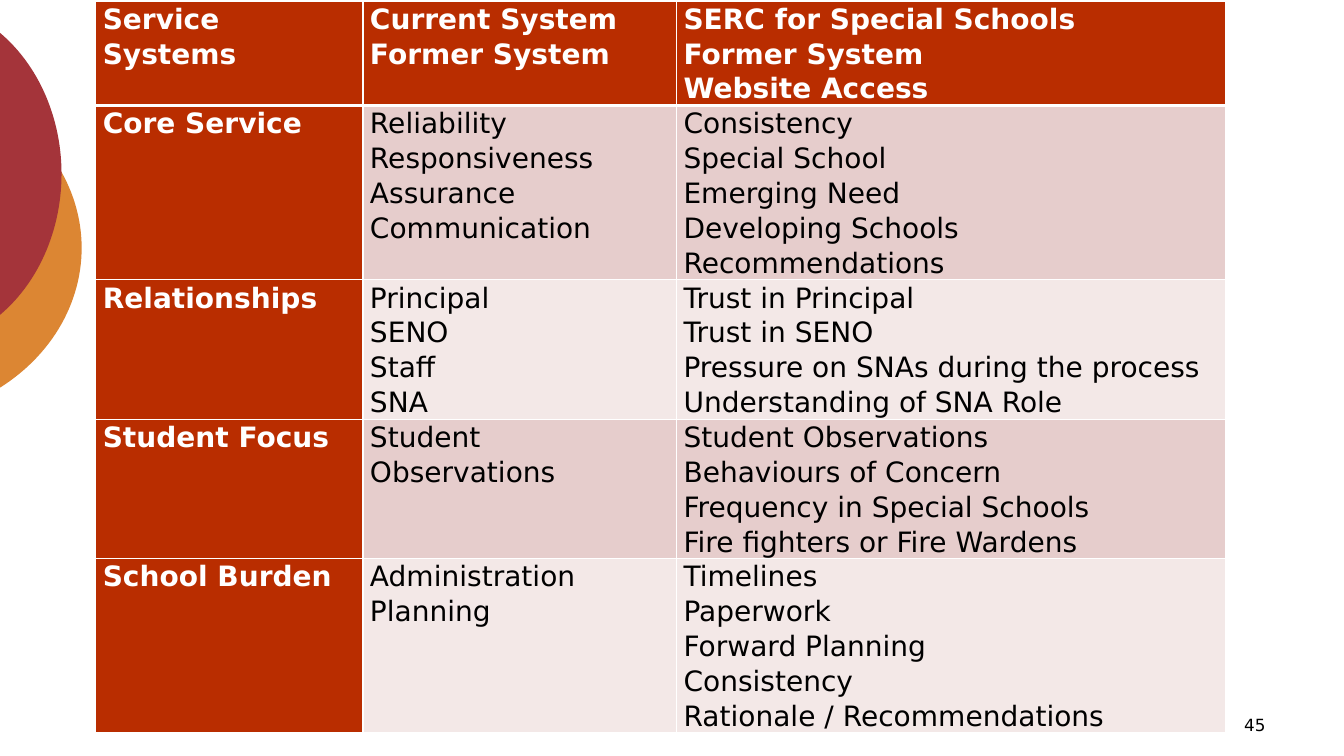
"""Build the slide comparing service systems in a table beside two cut discs."""
from lxml import etree
from pptx import Presentation
from pptx.dml.color import RGBColor
from pptx.enum.shapes import MSO_SHAPE
from pptx.enum.text import MSO_ANCHOR, PP_ALIGN
from pptx.oxml.ns import qn
from pptx.util import Inches, Pt

JUSTIFY, RIGHT, BOTTOM = PP_ALIGN.JUSTIFY, PP_ALIGN.RIGHT, MSO_ANCHOR.BOTTOM
OVAL = MSO_SHAPE.OVAL
COLORS = {"white": "FFFFFF", "black": "000000", "header": "B92D00", "dark band": "E6CDCC",
          "light band": "F3E8E7", "orange": "DC8633", "red": "A4343A"}
FONT = "DejaVu Sans"
LINE_HEIGHT = 0.33
COLUMN_WIDTHS = [2.65, 3.11, 5.45]
DISCS = [("orange", -3.1, 0.75, 3.91, 3.42), ("red", -2.33, 0, 2.94, 3.45)]
ROWS = [
    [["Service Systems"], ["Current System", "Former System"],
     ["SERC for Special Schools", "Former System", "Website Access"]],
    [["Core Service"], ["Reliability", "Responsiveness", "Assurance", "Communication"],
     ["Consistency", "Special School", "Emerging Need", "Developing Schools", "Recommendations"]],
    [["Relationships"], ["Principal", "SENO", "Staff", "SNA"],
     ["Trust in Principal", "Trust in SENO", "Pressure on SNAs during the process",
      "Understanding of SNA Role"]],
    [["Student Focus"], ["Student Observations"],
     ["Student Observations", "Behaviours of Concern", "Frequency in Special Schools",
      "Fire fighters or Fire Wardens"]],
    [["School Burden"], ["Administration", "Planning"],
     ["Timelines", "Paperwork", "Forward Planning", "Consistency", "Rationale / Recommendations"]],
]


def write_paragraph(paragraph, text, alignment, size, color, bold=False):
    paragraph.text = text
    paragraph.alignment = alignment
    for name, value in {"name": FONT, "size": Pt(size), "bold": bold}.items():
        setattr(paragraph.font, name, value)
    paragraph.font.color.rgb = RGBColor.from_string(COLORS[color])


def add_border(cell, side, width):
    line = etree.SubElement(cell._tc.get_or_add_tcPr(), qn(f"a:ln{side}"), w=str(Pt(width)))
    fill = etree.SubElement(line, qn("a:solidFill"))
    etree.SubElement(fill, qn("a:srgbClr"), val=COLORS["white"])


presentation = Presentation()
presentation.slide_width = Inches(13.33)
presentation.slide_height = Inches(7.5)
slide = presentation.slides.add_slide(presentation.slide_layouts[6])

for color, *box in DISCS:
    disc = slide.shapes.add_shape(OVAL, *map(Inches, box))
    disc.shadow.inherit = False
    disc.fill.solid()
    disc.fill.fore_color.rgb = RGBColor.from_string(COLORS[color])
    disc.line.fill.background()

row_heights = [LINE_HEIGHT * max(len(lines) for lines in row) for row in ROWS]
table = slide.shapes.add_table(
    len(ROWS), len(COLUMN_WIDTHS), Inches(0.95), Inches(0.01),
    Inches(sum(COLUMN_WIDTHS)), Inches(sum(row_heights))).table
for column, width in zip(table.columns, COLUMN_WIDTHS):
    column.width = Inches(width)

for row_index, row in enumerate(ROWS):
    table.rows[row_index].height = Inches(row_heights[row_index])
    for column_index, lines in enumerate(row):
        cell = table.cell(row_index, column_index)
        heading = row_index == 0 or column_index == 0
        margins = {"margin_left": 0.07, "margin_right": 0.07, "margin_top": 0, "margin_bottom": 0}
        for name, value in margins.items():
            setattr(cell, name, Inches(value))
        for side in "LRTB":
            thick = (row_index, side) in [(0, "B"), (1, "T")]
            add_border(cell, side, 3 if thick else 1)
        band = "header" if heading else "dark band" if row_index % 2 else "light band"
        cell.fill.solid()
        cell.fill.fore_color.rgb = RGBColor.from_string(COLORS[band])
        for line_index, text in enumerate(lines):
            frame = cell.text_frame
            paragraph = frame.add_paragraph() if line_index else frame.paragraphs[0]
            write_paragraph(paragraph, text, JUSTIFY, 20, "white" if heading else "black", heading)
            paragraph.line_spacing = 1.07

number_box = slide.shapes.add_textbox(Inches(9.54), Inches(6.84), Inches(3.11), Inches(0.5))
number_box.text_frame.word_wrap = True
number_box.text_frame.vertical_anchor = BOTTOM
write_paragraph(number_box.text_frame.paragraphs[0], "45", RIGHT, 12, "black")

presentation.save("out.pptx")
